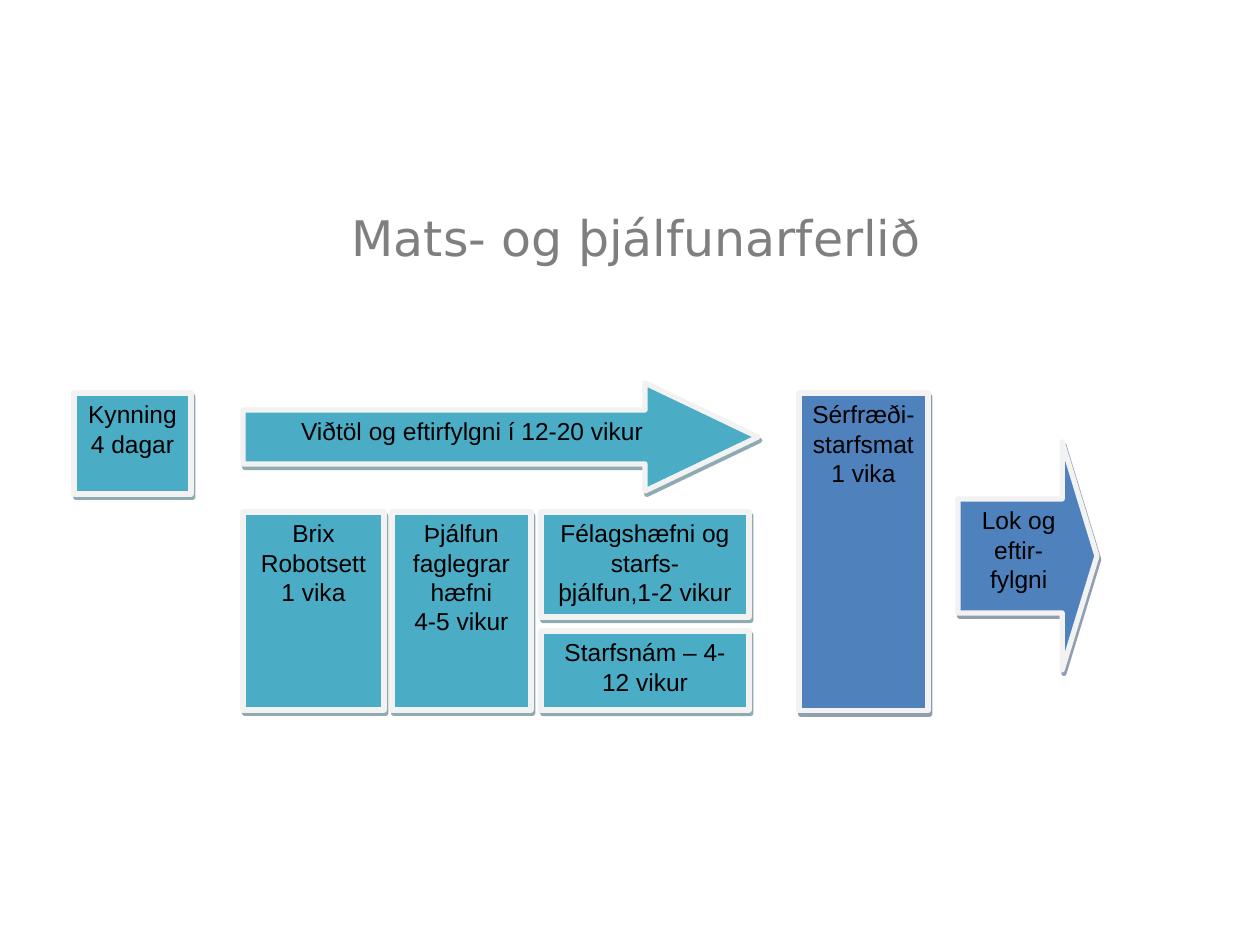
from lxml import etree
from pptx import Presentation
from pptx import util as u
from pptx.dml.color import RGBColor
from pptx.enum import shapes, text
from pptx.oxml.ns import qn

PX = u.Inches(1) / 126
COLORS = {
    "teal": "4BACC6", "teal_shadow": "205867",
    "blue": "4F81BD", "blue_shadow": "243F60",
    "border": "F2F2F2", "title": "7F7F7F", "text": "000000",
}
RECT = shapes.MSO_SHAPE.RECTANGLE
ARROW = shapes.MSO_SHAPE.RIGHT_ARROW


def px(n):
    return round(n * PX)


def rgb(name):
    return RGBColor.from_string(COLORS[name])


def write(tf, lines, size=14, font="Arial", color="text",
          anchor=text.MSO_ANCHOR.TOP):
    """Write centred paragraphs into a text frame."""
    tf.word_wrap = True
    tf.auto_size = text.MSO_AUTO_SIZE.NONE
    tf.vertical_anchor = anchor
    for i, line in enumerate(lines):
        p = tf.paragraphs[0] if i == 0 else tf.add_paragraph()
        p.alignment = text.PP_ALIGN.CENTER
        r = p.add_run()
        r.text = line
        r.font.size = u.Pt(size)
        r.font.name = font
        r.font.color.rgb = rgb(color)


def add_shadow(sp, color):
    """Give a shape a hard, half-transparent shadow to the lower right."""
    sp.shadow.inherit = False
    effects = sp._element.spPr.find(qn("a:effectLst"))
    shadow = etree.SubElement(effects, qn("a:outerShdw"), blurRad="0",
                              dist=str(u.Pt(2.2)), dir=str(63 * 60000),
                              algn="ctr", rotWithShape="0")
    clr = etree.SubElement(shadow, qn("a:srgbClr"), val=COLORS[color])
    etree.SubElement(clr, qn("a:alpha"), val="50000")


def add_step(s, box, lines, kind=RECT, fill="teal", head=None):
    """Add one step; head is an arrow's head length relative to its height."""
    sp = s.shapes.add_shape(kind, *map(px, box))
    if head:
        sp.adjustments[0], sp.adjustments[1] = 0.5, head
    sp.fill.solid()
    sp.fill.fore_color.rgb = rgb(fill)
    sp.line.color.rgb = rgb("border")
    sp.line.width = u.Pt(3)
    add_shadow(sp, fill + "_shadow")
    write(sp.text_frame, lines)


def add_title(s, box, title):
    sp = s.shapes.title
    sp.left, sp.top, sp.width, sp.height = map(px, box)
    write(sp.text_frame, [title], size=28, font="DejaVu Sans", color="title",
          anchor=text.MSO_ANCHOR.MIDDLE)


def add_training(s, x, y, w, h):
    """Interview arrow above the training modules."""
    add_step(s, (x, y, w, 108), ["Viðtöl og eftirfylgni í 12-20 vikur"],
             kind=ARROW, head=1.046)
    top = y + 129
    rows = h - 129
    # Full-height modules
    add_step(s, (x, top, 141, rows), ["Brix", "Robotsett", "1 vika"])
    add_step(s, (x + 149, top, 139, rows),
             ["Þjálfun", "faglegrar", "hæfni", "4-5 vikur"])
    # Stacked modules
    add_step(s, (x + 298, top, 208, 105),
             ["Félagshæfni og starfs-", "þjálfun,1-2 vikur"])
    add_step(s, (x + 298, top + 119, 208, rows - 119),
             ["Starfsnám – 4-12 vikur"])


def add_closing(s, x, y):
    """Final assessment and the follow-up arrow."""
    add_step(s, (x, y, 129, 318), ["Sérfræði-", "starfsmat", "1 vika"],
             fill="blue")
    add_step(s, (x + 159, y + 49, 139, 228), ["Lok og eftir-", "fylgni"],
             kind=ARROW, fill="blue", head=0.25)


def main():
    prs = Presentation()
    prs.slide_width, prs.slide_height = u.Inches(10), u.Inches(7.5)
    s = prs.slides.add_slide(prs.slide_layouts[5])
    add_title(s, (69, 168, 1134, 137), "Mats- og þjálfunarferlið")
    add_step(s, (74, 393, 117, 101), ["Kynning", "4 dagar"])
    add_training(s, 243, 383, 515, 327)
    add_closing(s, 799, 393)
    prs.save("out.pptx")


if __name__ == "__main__":
    main()
